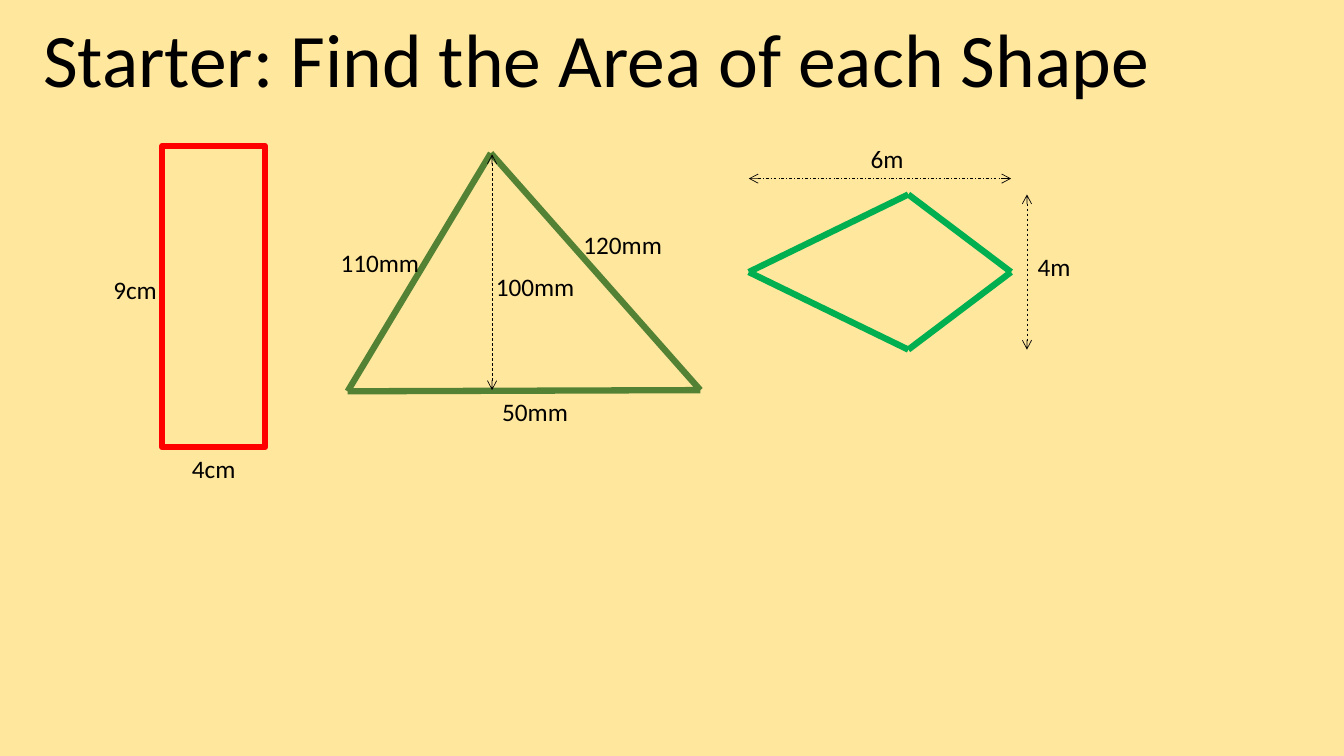
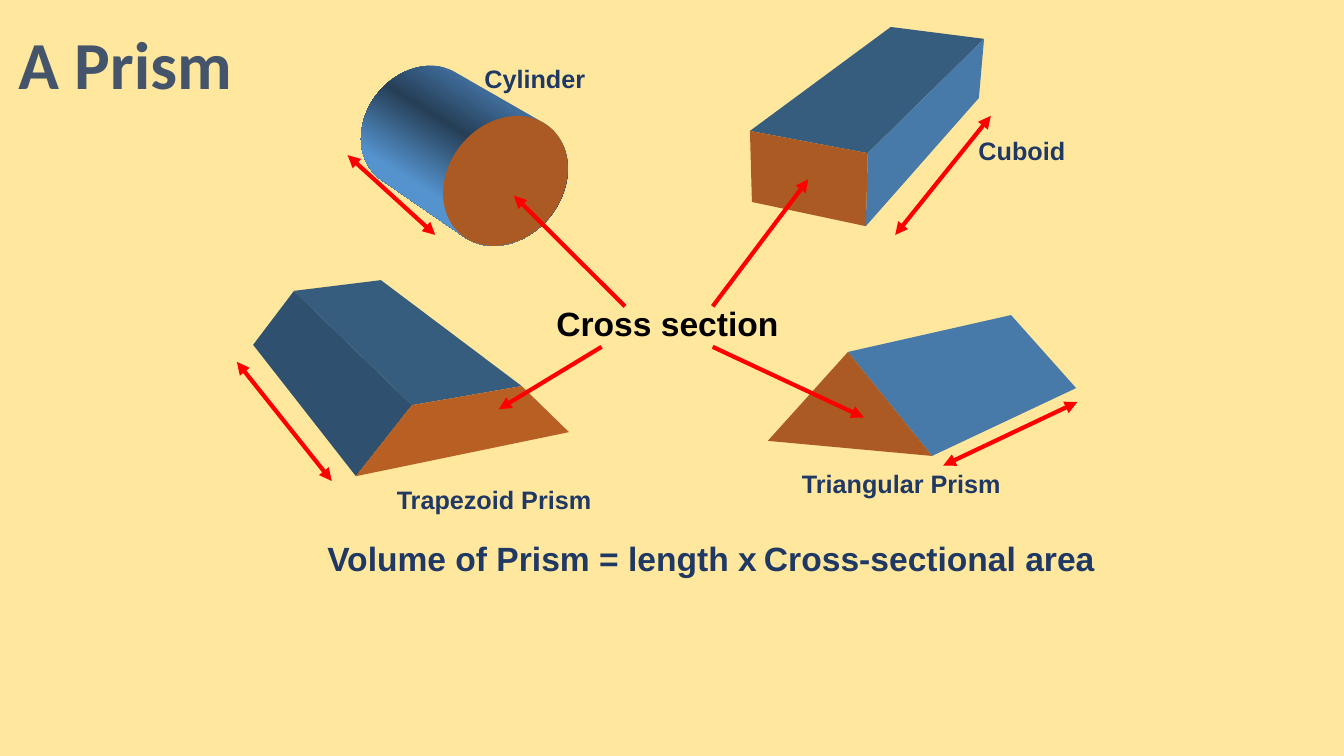
from math import cos, radians, sin

from lxml.etree import SubElement
from pptx import Presentation
from pptx.dml.color import RGBColor as RGB
from pptx.enum.dml import MSO_LINE as Dash
from pptx.enum.shapes import MSO_CONNECTOR as Conn, MSO_SHAPE as Shape
from pptx.enum.text import MSO_ANCHOR as Anchor, MSO_AUTO_SIZE as Fit, PP_ALIGN as Align
from pptx.oxml.ns import qn
from pptx.util import Cm, Pt

SAND = RGB(0xFF, 0xE7, 0x9E)
BLACK = RGB(0, 0, 0)
RED = RGB(0xFF, 0, 0)
OLIVE = RGB(0x54, 0x82, 0x35)
GREEN = RGB(0, 0xB0, 0x50)
SLATE = RGB(0x44, 0x54, 0x6A)
NAVY = RGB(0x20, 0x38, 0x64)
ORANGE = RGB(0xAB, 0x5A, 0x24)
LIGHT_ORANGE = RGB(0xB8, 0x60, 0x23)
BLUE = RGB(0x47, 0x7A, 0xA9)
MID_BLUE = RGB(0x36, 0x5D, 0x7E)
DARK_BLUE = RGB(0x2F, 0x50, 0x6E)
# Gradient across the curved side of the cylinder: percent, colour
CURVE_STOPS = ((25, RGB(0x3F, 0x6C, 0x99)), (43, RGB(0x26, 0x3F, 0x57)),
               (69, RGB(0x55, 0x93, 0xCE)))


class Deck:
    """Style and current slide; all lengths are in centimetres."""

    def __init__(self):
        self.prs = Presentation()
        self.prs.slide_width, self.prs.slide_height = Cm(33.87), Cm(19.05)
        self.s = None

    def slide(self):
        self.s = self.prs.slides.add_slide(self.prs.slide_layouts[6])
        fill = self.s.background.fill
        fill.solid()
        fill.fore_color.rgb = SAND

    def text(self, runs, x, y, w, h, size=18, font="Calibri", color=BLACK,
             bold=False, align=Align.CENTER, wrap=True, anchor=Anchor.TOP):
        """Runs is a string, or a list of (text, size, bold)."""
        tf = self.s.shapes.add_textbox(Cm(x), Cm(y), Cm(w), Cm(h)).text_frame
        tf.word_wrap = wrap
        tf.vertical_anchor = anchor
        tf.auto_size = Fit.NONE if anchor == Anchor.MIDDLE else Fit.SHAPE_TO_FIT_TEXT
        p = tf.paragraphs[0]
        p.alignment = align
        for words, pt, strong in [(runs, size, bold)] if isinstance(runs, str) else runs:
            r = p.add_run()
            r.text = words
            r.font.name, r.font.size, r.font.bold = font, Pt(pt), strong
            r.font.color.rgb = color

    def label(self, words, x, y):
        self.text(words, x, y, 2.59, 1.02)

    def caption(self, runs, x, y, w, size=18, color=NAVY):
        self.text(runs, x, y, w, 1.02 if size == 18 else 1.27, size, "Arial", color,
                  True, Align.LEFT, False)

    def line(self, start, end, color, width, dash=None, head=None, tail=None):
        c = self.s.shapes.add_connector(Conn.STRAIGHT, *map(Cm, (*start, *end)))
        c.line.color.rgb = color
        c.line.width = Pt(width)
        if dash:
            c.line.dash_style = dash
        spPr = c._element.spPr
        for tag, kind in (("a:headEnd", head), ("a:tailEnd", tail)):
            if kind:
                SubElement(spPr.find(qn("a:ln")), qn(tag), type=kind)
        SubElement(spPr, qn("a:effectLst"))

    def outline(self, points, color):
        for start, end in zip(points, points[1:] + points[:1]):
            self.line(start, end, color, 4.5)

    def measure(self, start, end, dash=Dash.DASH):
        self.line(start, end, BLACK, 0.5, dash, "arrow", "arrow")

    def arrow(self, start, end, both=False):
        self.line(start, end, RED, 3, None, "triangle" if both else None, "triangle")

    def rectangle(self, x, y, w, h, color):
        sp = self.s.shapes.add_shape(Shape.RECTANGLE, Cm(x), Cm(y), Cm(w), Cm(h))
        sp.shadow.inherit = False
        sp.fill.background()
        sp.line.color.rgb = color
        sp.line.width = Pt(4.5)

    def paint(self, sp, color):
        sp.shadow.inherit = False
        sp.line.fill.background()
        sp.fill.solid()
        sp.fill.fore_color.rgb = color

    def face(self, points, color):
        (x, y), *rest = [(Cm(px), Cm(py)) for px, py in points]
        fb = self.s.shapes.build_freeform(x, y)
        fb.add_line_segments(rest, close=True)
        sp = fb.convert_to_shape()
        self.paint(sp, color)
        return sp

    def cylinder(self, back, front, turn):
        """Back and front are (centre x, centre y, width, height) of the ends."""
        def arc(end, first):
            cx, cy, w, h = end
            a = radians(turn)
            for t in map(radians, range(first, first + 181, 5)):
                u, v = w / 2 * cos(t), h / 2 * sin(t)
                yield cx + u * cos(a) - v * sin(a), cy + u * sin(a) + v * cos(a)

        side = self.face([*arc(back, 85), *arc(front, -95)], BLUE)
        side.fill.gradient()
        side.fill.gradient_angle = 238
        stops = side._element.spPr.find(".//" + qn("a:gsLst"))
        stops.clear()
        for percent, color in CURVE_STOPS:
            gs = SubElement(stops, qn("a:gs"), pos=str(percent * 1000))
            SubElement(gs, qn("a:srgbClr"), val=str(color))
        cx, cy, w, h = front
        sp = self.s.shapes.add_shape(Shape.OVAL, Cm(cx - w / 2), Cm(cy - h / 2), Cm(w), Cm(h))
        sp.rotation = turn
        self.paint(sp, ORANGE)


def area_slide(d):
    d.slide()
    d.text("Starter: Find the Area of each Shape", 0.69, 0.18, 28.68, 2.57, 54, wrap=False)

    # Rectangle
    d.rectangle(4.09, 3.68, 2.59, 7.59, RED)
    d.label("4cm", 4.09, 11.3)
    d.label("9cm", 2.11, 6.78)

    # Triangle
    d.outline([(12.37, 3.86), (17.65, 9.83), (8.76, 9.86)], OLIVE)
    d.measure((12.4, 3.89), (12.4, 9.83))
    for words, x, y in (("50mm", 12.19, 9.86), ("110mm", 8.28, 6.12),
                        ("120mm", 14.4, 5.66), ("100mm", 12.19, 6.71)):
        d.label(words, x, y)

    # Kite
    left, right, top, bottom = 18.87, 25.48, 4.9, 8.81
    middle = (top + bottom) / 2
    d.outline([(left, middle), (22.89, top), (right, middle), (22.89, bottom)], GREEN)
    d.measure((25.88, top), (25.88, bottom))
    d.measure((left, 4.5), (right, 4.5), Dash.DASH_DOT)
    d.label("6m", 21.06, 3.48)
    d.label("4m", 25.27, 6.2)


def prism_slide(d):
    d.slide()
    d.text("A Prism", 0.08, 0, 6.15, 3.18, 48, color=SLATE, bold=True, anchor=Anchor.MIDDLE)

    # Cylinder
    d.cylinder((10.58, 3.2, 2.72, 3.3), (12.74, 4.56, 2.88, 3.51), 39)

    # Cuboid: corners shared by its faces
    near, far, low = (21.87, 3.86), (24.8, 0.98), (21.82, 5.7)
    corner = (18.9, 3.3)
    d.face([(22.45, 0.68), far, near, corner], MID_BLUE)
    d.face([far, (24.67, 2.47), low, near], BLUE)
    d.face([corner, near, low, (18.95, 5.09)], ORANGE)

    # Trapezoid prism
    ridge, near, low, right = (7.41, 7.33), (10.38, 10.21), (8.97, 12), (13.15, 9.73)
    d.face([ridge, near, low, (6.38, 8.69)], DARK_BLUE)
    d.face([ridge, (9.6, 7.06), right, near], MID_BLUE)
    d.face([near, right, (14.34, 10.89), low], LIGHT_ORANGE)

    # Triangular prism
    apex, low = (21.37, 8.87), (23.49, 11.49)
    d.face([apex, (25.48, 7.94), (27.12, 9.78), low], BLUE)
    d.face([apex, low, (19.35, 11.11)], ORANGE)

    # Arrows to the cross sections
    for start, end in (((15.75, 7.72), (12.95, 4.93)), ((15.16, 8.74), (12.57, 10.31)),
                       ((17.96, 7.72), (20.37, 4.52)), ((17.96, 8.74), (21.77, 10.52))):
        d.arrow(start, end)
    d.caption("Cross section", 13.77, 7.52, 6.12, 24, BLACK)

    # Arrows along the lengths
    for start, end in (((23.77, 11.73), (27.15, 10.13)), ((24.97, 2.92), (22.56, 5.92)),
                       ((5.97, 9.12), (8.36, 12.12)), ((8.76, 3.91), (10.97, 5.92))):
        d.arrow(start, end, both=True)

    # Names and formula
    for words, x, y, w in (("Cylinder", 11.96, 1.47, 3.05), ("Cuboid", 24.41, 3.28, 2.69),
                           ("Triangular Prism", 19.96, 11.68, 5.56),
                           ("Trapezoid Prism", 9.75, 12.09, 5.46)):
        d.caption(words, x, y, w)
    d.caption([("Volume of Prism = length x", 24, True), (" ", 18, False),
               ("Cross-sectional area", 24, True)], 8, 13.44, 19.91, 24)


def main():
    d = Deck()
    area_slide(d)
    prism_slide(d)
    d.prs.save("out.pptx")


if __name__ == "__main__":
    main()
